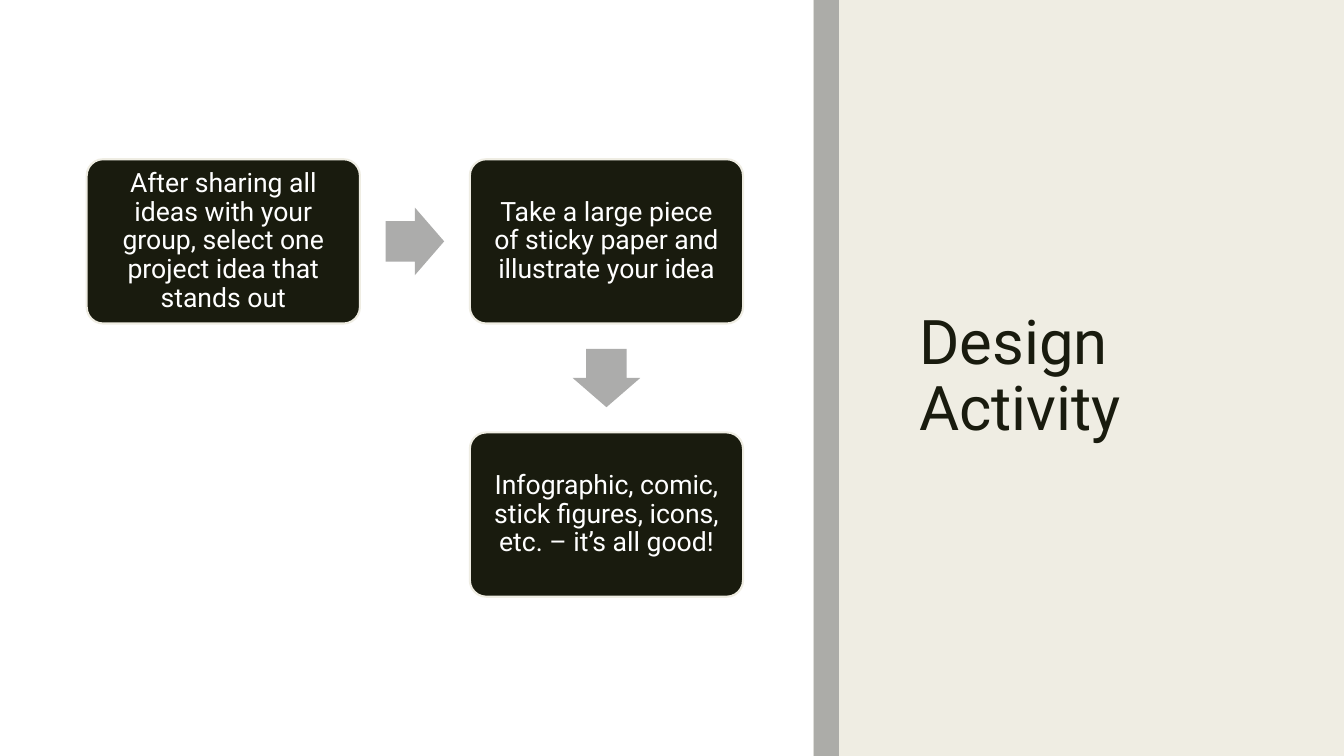
"""Build the Design Activity slide: three steps joined by arrows, with a title panel."""
from dataclasses import dataclass
from itertools import pairwise

from pptx import Presentation
from pptx.dml.color import RGBColor
from pptx.enum.shapes import MSO_SHAPE
from pptx.enum.text import MSO_ANCHOR, PP_ALIGN
from pptx.util import Inches, Pt

TITLE = "Design Activity"
STEPS = [
    ("After sharing all ideas with your group, select one project idea that stands out", 0, 0),
    ("Take a large piece of sticky paper and illustrate your idea", 1, 0),
    ("Infographic, comic, stick figures, icons, etc. – it’s all good!", 1, 1),
]


@dataclass(frozen=True)
class Theme:
    """Colours, font and type sizes."""
    dark: str = "191B0E"
    cream: str = "EFEDE3"
    white: str = "FFFFFF"
    bar: str = "ACACA8"
    arrow: str = "ACACAB"
    font: str = "Roboto"
    title_size: int = 44
    step_size: int = 19


THEME = Theme()
SLIDE_WIDTH, SLIDE_HEIGHT = 13.33, 7.5
WHITE_WIDTH, BAR_WIDTH = 8.07, 0.25
GRID_LEFT, GRID_TOP = 0.86, 1.58
STEP_WIDTH, STEP_HEIGHT = 2.71, 1.63
COLUMN_PITCH, ROW_PITCH = 3.8, 2.71
ARROW_LENGTH, ARROW_BREADTH = 0.58, 0.67
STEP_INSET = 0.13


def add_block(page, kind, left, top, width, height, color):
    """Add a flat filled shape without outline."""
    block = page.shapes.add_shape(kind, Inches(left), Inches(top), Inches(width), Inches(height))
    block.shadow.inherit = False
    block.fill.solid()
    block.fill.fore_color.rgb = RGBColor.from_string(color)
    block.line.fill.background()
    return block


def write_text(box, text, size, color, alignment, spacing):
    """Put one vertically centred paragraph into a box."""
    frame = box.text_frame
    frame.word_wrap = True
    frame.vertical_anchor = MSO_ANCHOR.MIDDLE
    frame.text = text
    para = frame.paragraphs[0]
    para.alignment = alignment
    para.line_spacing = spacing
    font = para.runs[0].font
    font.name, font.size = THEME.font, Pt(size)
    font.color.rgb = RGBColor.from_string(color)


def add_step(page, text, column, row):
    """Add a rounded step box and return its centre."""
    left, top = GRID_LEFT + column * COLUMN_PITCH, GRID_TOP + row * ROW_PITCH
    box = add_block(page, MSO_SHAPE.ROUNDED_RECTANGLE, left, top, STEP_WIDTH, STEP_HEIGHT, THEME.dark)
    box.adjustments[0] = 0.1
    box.line.color.rgb = RGBColor.from_string(THEME.cream)
    box.line.width = Pt(1.5)
    frame = box.text_frame
    frame.margin_left = frame.margin_right = Inches(STEP_INSET)
    frame.margin_top = frame.margin_bottom = Inches(STEP_INSET)
    write_text(box, text, THEME.step_size, THEME.white, PP_ALIGN.CENTER, 0.9)
    return left + STEP_WIDTH / 2, top + STEP_HEIGHT / 2


def add_arrow(page, start, end):
    """Add a block arrow midway between two step centres."""
    left = (start[0] + end[0] - ARROW_LENGTH) / 2
    top = (start[1] + end[1] - ARROW_BREADTH) / 2
    arrow = add_block(page, MSO_SHAPE.RIGHT_ARROW, left, top, ARROW_LENGTH, ARROW_BREADTH, THEME.arrow)
    arrow.adjustments[0], arrow.adjustments[1] = 0.6, 0.5
    arrow.rotation = 90 if end[1] > start[1] else 0


def main():
    """Assemble and save the deck."""
    deck = Presentation()
    deck.slide_width, deck.slide_height = Inches(SLIDE_WIDTH), Inches(SLIDE_HEIGHT)
    page = deck.slides.add_slide(deck.slide_layouts[6])
    for left, width, color in [
        (0, SLIDE_WIDTH, THEME.cream),
        (0, WHITE_WIDTH, THEME.white),
        (WHITE_WIDTH, BAR_WIDTH, THEME.bar),
    ]:
        add_block(page, MSO_SHAPE.RECTANGLE, left, 0, width, SLIDE_HEIGHT, color)
    title = page.shapes.add_textbox(Inches(9.02), Inches(0.7), Inches(3.61), Inches(6.1))
    write_text(title, TITLE, THEME.title_size, THEME.dark, PP_ALIGN.LEFT, 0.89)
    centres = [add_step(page, *step) for step in STEPS]
    for start, end in pairwise(centres):
        add_arrow(page, start, end)
    deck.save("out.pptx")


if __name__ == "__main__":
    main()
